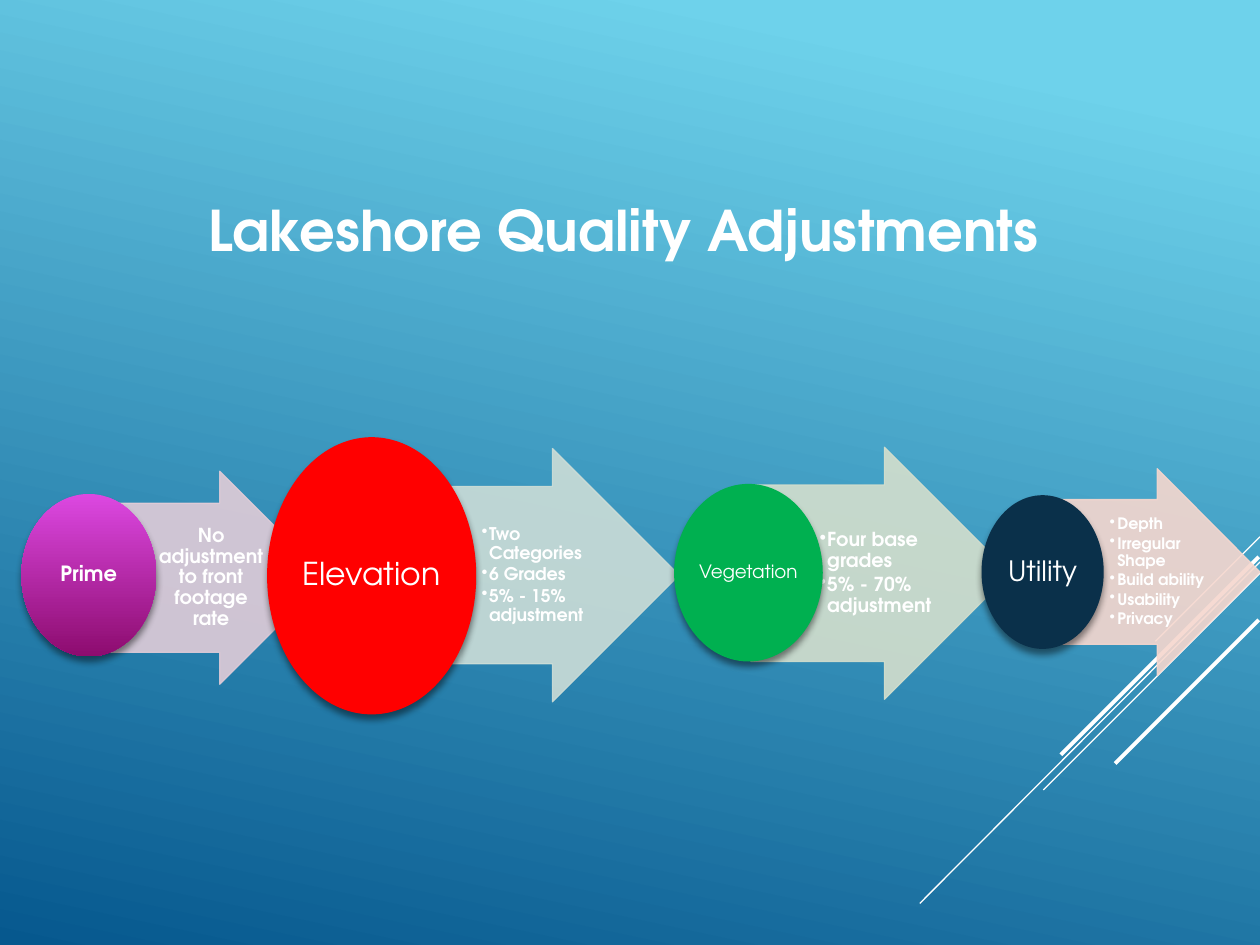
from lxml.etree import SubElement
from pptx import Presentation
from pptx.dml.color import RGBColor
from pptx.enum.shapes import MSO_CONNECTOR, MSO_SHAPE
from pptx.enum.text import MSO_ANCHOR, MSO_AUTO_SIZE, PP_ALIGN
from pptx.oxml.ns import qn
from pptx.util import Inches, Pt

HUES = {
    "white": "FFFFFF", "black": "000000", "sky": "6ED2EB", "sea": "06588E",
    "pink": "DC48E1", "plum": "8D0C6F", "red": "FF0000", "green": "00B050",
    "navy": "0A304A", "mauve": "E1CCD8", "mint": "CCDDD7", "sage": "D4DFCD",
    "peach": "F6D7CE",
}


def tint(name):
    return RGBColor.from_string(HUES[name])


def add(node, tag, **attrs):
    return SubElement(node, qn(tag), attrs)


class Deck:
    font = "TeX Gyre Adventor"

    def __init__(self):
        self.file = Presentation()
        self.file.slide_width = Inches(10)
        self.file.slide_height = Inches(7.5)
        self.slide = self.file.slides.add_slide(self.file.slide_layouts[6])
        self.shapes = self.slide.shapes

    def blend(self, fill, stops, angle):
        fill.gradient()
        fill.gradient_angle = 360 - angle
        for stop, (place, name) in zip(fill.gradient_stops, stops):
            stop.position = place
            stop.color.rgb = tint(name)

    def ray(self, x1, y1, x2, y2, width):
        line = self.shapes.add_connector(
            MSO_CONNECTOR.STRAIGHT, Inches(x1), Inches(y1), Inches(x2), Inches(y2))
        line.line.color.rgb = tint("white")
        line.line.width = Pt(width)
        add(line._element.spPr, "a:effectLst")

    def arrow(self, box, name):
        shape = self.shapes.add_shape(MSO_SHAPE.RIGHT_ARROW, *map(Inches, box))
        shape.adjustments[0] = 0.7
        shape.adjustments[1] = 0.5
        shape.fill.solid()
        shape.fill.fore_color.rgb = tint(name)
        shape.line.color.rgb = tint(name)
        shape.line.width = Pt(0.75)
        shape.shadow.inherit = False
        for hue in list(shape._element.spPr.iter(qn("a:srgbClr"))):
            add(hue, "a:alpha", val="90000")

    def disc(self, box, names):
        shape = self.shapes.add_shape(MSO_SHAPE.OVAL, *map(Inches, box))
        if len(names) > 1:
            self.blend(shape.fill, zip((0, 1), names), 90)
        else:
            shape.fill.solid()
            shape.fill.fore_color.rgb = tint(names[0])
        shape.line.fill.background()
        shape.shadow.inherit = False
        glow = add(shape._element.spPr.find(qn("a:effectLst")), "a:outerShdw",
                   blurRad=str(Pt(4)), dist=str(Pt(3)), dir="5400000",
                   algn="ctr", rotWithShape="0")
        hue = add(glow, "a:srgbClr", val=HUES["black"])
        add(hue, "a:alpha", val="46000")

    def text(self, box, lines, size, bold, list_style=False):
        frame = self.shapes.add_textbox(*map(Inches, box)).text_frame
        frame.word_wrap = True
        frame.vertical_anchor = MSO_ANCHOR.MIDDLE
        frame.margin_left = Inches(0.03 if list_style or len(lines[0]) > 12 else 0.01)
        frame.margin_right = frame.margin_top = frame.margin_bottom = Inches(0.01)
        frame.text = "\n".join(lines)
        for para in frame.paragraphs:
            props = para._p.get_or_add_pPr()
            after = add(props, "a:spcAft")
            add(after, "a:spcPct", val="15000" if list_style else "35000")
            if list_style:
                para.level = 1
                props.set("marL", str(Inches(0.06)))
                props.set("indent", str(Inches(-0.06)))
                add(props, "a:buChar", char="•")
            else:
                para.alignment = PP_ALIGN.CENTER
            para.line_spacing = 0.9
            self.style(para, size, bold)
        return frame

    def style(self, para, size, bold):
        for run in para.runs:
            run.font.name = self.font
            run.font.size = Pt(size)
            run.font.bold = bold
            run.font.color.rgb = tint("white")

    def title(self, box, words):
        frame = self.shapes.add_textbox(*map(Inches, box)).text_frame
        frame.word_wrap = False
        frame.auto_size = MSO_AUTO_SIZE.SHAPE_TO_FIT_TEXT
        frame.text = words
        frame.paragraphs[0].alignment = PP_ALIGN.CENTER
        self.style(frame.paragraphs[0], 32, True)

    def note(self, box, lines, size):
        x, y, w, h = box
        area = (x + w / 4, y + 0.15 * h, 0.49 * w, 0.7 * h)
        self.text(area, lines, size, True, len(lines) > 1)

    def label(self, box, word, size, bold):
        x, y, w, h = box
        area = (x + 0.15 * w, y + 0.15 * h, 0.7 * w, 0.7 * h)
        self.text(area, [word], size, bold)


RAYS = [
    (10, 4.26, 9.17, 5.09, 0.75),
    (10, 4.46, 7.3, 7.17, 0.75),
    (10, 4.55, 8.28, 6.27, 0.75),
    (9.99, 4.42, 8.42, 5.99, 2.25),
    (9.99, 4.92, 8.85, 6.06, 2.25),
]

STAGES = [
    ((0.76, 3.74, 1.83, 1.69), "mauve", ["No adjustment to front footage rate"], 11,
     (0.17, 3.92, 1.07, 1.29), ["pink", "plum"], "Prime", 12, True),
    ((3.26, 3.56, 2.13, 2.01), "mint",
     ["Two Categories", "6 Grades", "5% - 15% adjustment"], 10,
     (2.12, 3.47, 1.66, 2.2), ["red"], "Elevation", 18, False),
    ((5.96, 3.55, 2.06, 2), "sage", ["Four base grades", "5% - 70% adjustment"], 11,
     (5.35, 3.84, 1.18, 1.41), ["green"], "Vegetation", 10.5, False),
    ((8.37, 3.72, 1.63, 1.64), "peach",
     ["Depth", "Irregular Shape", "Build ability", "Usability", "Privacy"], 9,
     (7.79, 3.93, 0.97, 1.22), ["navy"], "Utility", 16, False),
]


def main():
    deck = Deck()
    deck.blend(deck.slide.background.fill, [(0.1, "sky"), (1, "sea")], 102)
    for ray in RAYS:
        deck.ray(*ray)
    deck.title((1.5, 1.5, 6.9, 0.64), "Lakeshore Quality Adjustments")
    for arrow, hue, lines, small, disc, fills, word, size, bold in STAGES:
        deck.arrow(arrow, hue)
        deck.note(arrow, lines, small)
        deck.disc(disc, fills)
        deck.label(disc, word, size, bold)
    deck.file.save("out.pptx")


if __name__ == "__main__":
    main()
